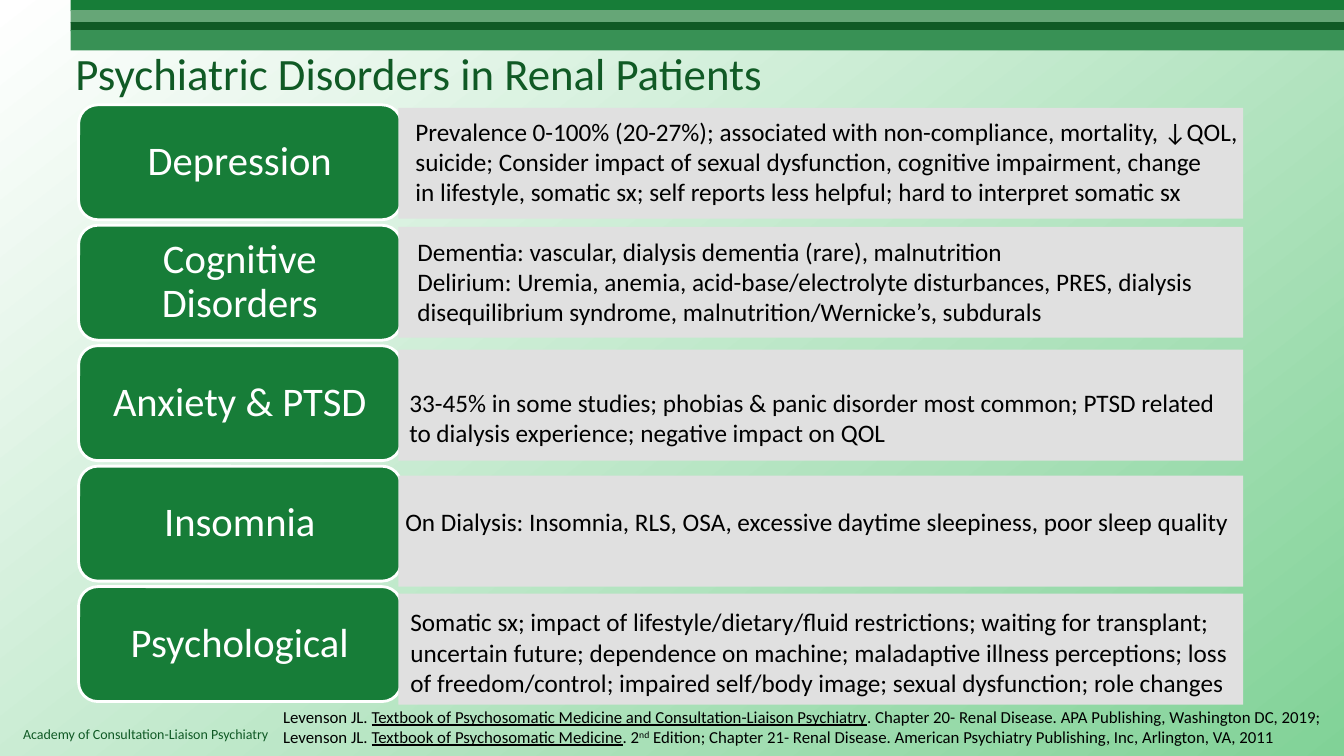
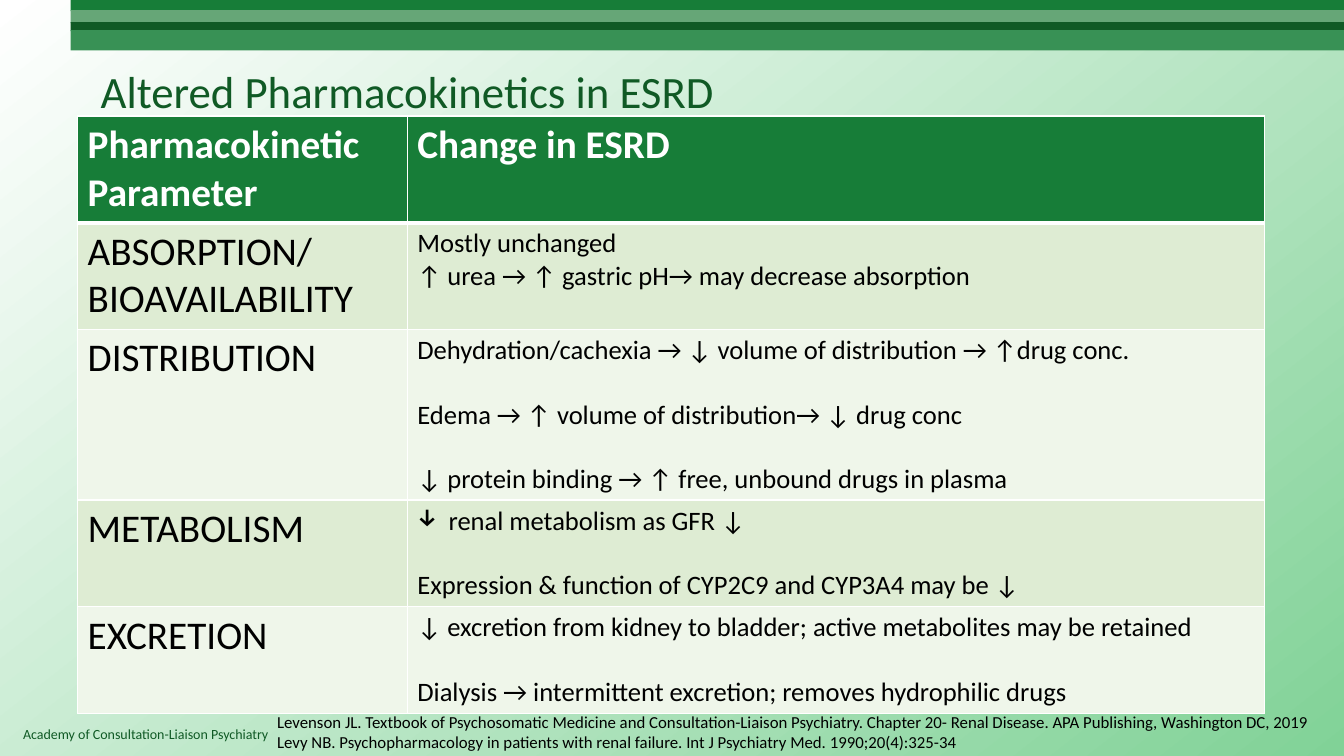
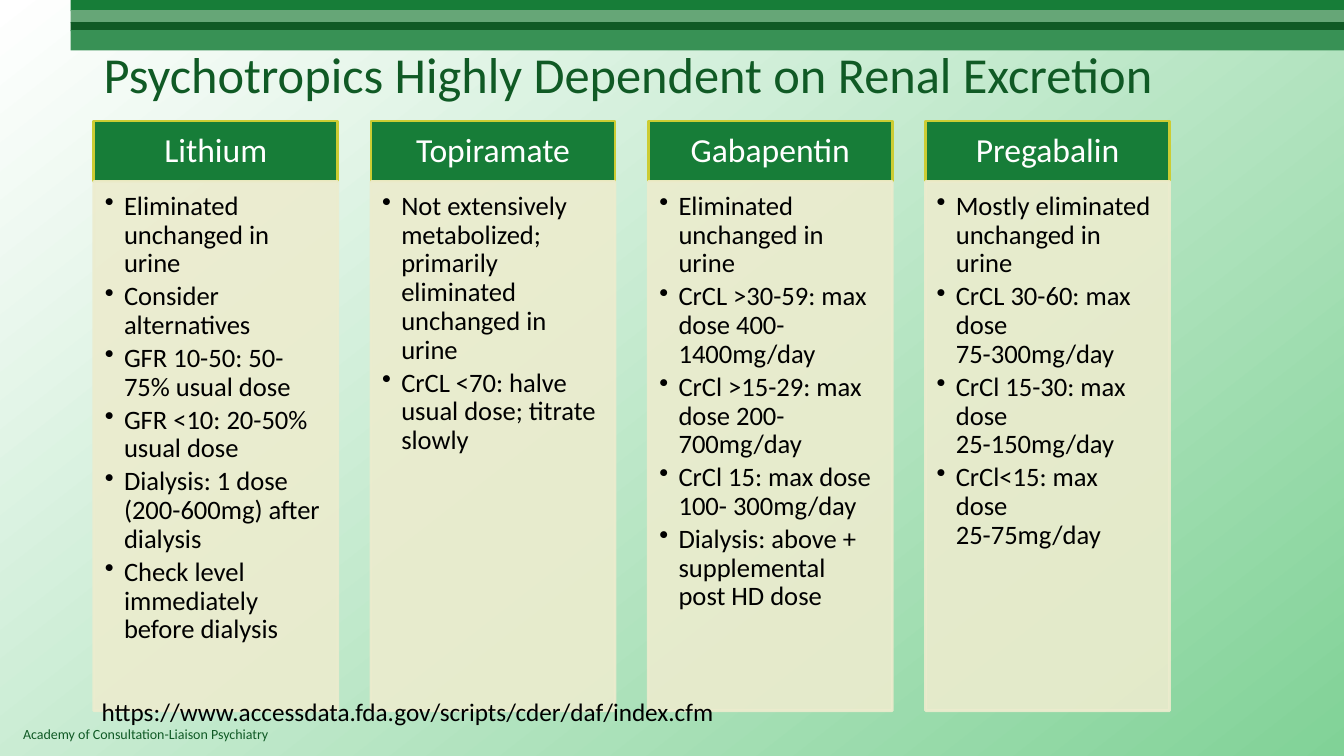
from dataclasses import dataclass
from itertools import zip_longest

from lxml import etree
from pptx import Presentation
from pptx import util as u
from pptx.dml.color import RGBColor
from pptx.enum import shapes, text
from pptx.oxml.ns import qn


@dataclass(frozen=True)
class Theme:
    """Colours and type sizes of the deck."""
    font: str = "Calibri"
    green: str = "177D38"
    dark: str = "105A25"
    sage: str = "66A677"
    leaf: str = "389155"
    mint: str = "81D297"
    white: str = "FFFFFF"
    black: str = "000000"
    grey: str = "E0E0E0"
    olive: str = "CCCC33"
    cream: str = "ECECCE"
    row_odd: str = "DEECD3"
    row_even: str = "EFF6EA"
    title: int = 32
    title_large: int = 36
    label: int = 29
    table_head: int = 28
    column_head: int = 24
    detail: int = 19
    body: int = 18
    source: int = 12
    footer: int = 10


THEME = Theme()
NO_INSETS = (0, 0, 0, 0)
TEXT_INSETS = (0.1, 0.05, 0.1, 0.05)


class Builder:
    def __init__(self):
        self.deck = Presentation()
        self.deck.slide_width = u.Inches(13.33)
        self.deck.slide_height = u.Inches(7.5)
        self.page = None

    # Shared page furniture: background, bands, footer, title
    def new_page(self, title, left, top=0, size=THEME.title):
        self.page = self.deck.slides.add_slide(self.deck.slide_layouts[6])
        fill = self.page.background.fill
        fill.gradient()
        fill.gradient_angle = 308
        for stop, color in zip(fill.gradient_stops, (THEME.white, THEME.mint)):
            stop.color.rgb = RGBColor.from_string(color)
        bands = ((0, 0.11, THEME.green), (0.1, 0.13, THEME.sage),
                 (0.22, 0.09, THEME.dark), (0.3, 0.2, THEME.leaf))
        for band_top, height, color in bands:
            self.shape((0.7, band_top, 12.63, height), color)
        self.label((0.13, 7.15, 9.25, 0.27),
                   ["Academy of Consultation-Liaison Psychiatry"],
                   THEME.footer, THEME.dark)
        self.label((left, top, 11.5, 1.45), [title], size, THEME.dark,
                   anchor=text.MSO_ANCHOR.MIDDLE)

    # Text
    def frame(self, box, insets, anchor):
        frame = box.text_frame
        frame.word_wrap = True
        frame.vertical_anchor = anchor
        (frame.margin_left, frame.margin_top,
         frame.margin_right, frame.margin_bottom) = map(u.Inches, insets)
        return frame

    def set_lines(self, frame, lines, size, color=THEME.black, bold=False,
                  align=text.PP_ALIGN.LEFT, spacing=1.0, before=0, after=0,
                  bullets=(), indent=0):
        """Set one paragraph per line; a line is a string or a list of spans."""
        for index, (line, bullet) in enumerate(zip_longest(lines, bullets)):
            para = frame.paragraphs[0] if index == 0 else frame.add_paragraph()
            para.alignment = align
            para.line_spacing = spacing
            para.space_before = u.Pt(before if index else 0)
            para.space_after = u.Pt(after)
            if bullet:
                props = para._p.get_or_add_pPr()
                props.set("marL", str(u.Inches(indent)))
                props.set("indent", str(u.Inches(-indent)))
                etree.SubElement(props, qn("a:buChar")).set("char", bullet)
            para.font.name = THEME.font
            para.font.size = u.Pt(size)
            para.font.bold = bold
            para.font.color.rgb = RGBColor.from_string(color)
            if isinstance(line, str):
                para.text = line
            else:
                self.add_spans(para, line)

    def add_spans(self, para, parts):
        for words, style in parts:
            span = para.add_run()
            span.text = words
            if style == "underline":
                span.font.underline = True
            elif style == "superscript":
                span._r.get_or_add_rPr().set("baseline", "30000")

    def label(self, area, lines, size, color=THEME.black,
              anchor=text.MSO_ANCHOR.TOP):
        box = self.page.shapes.add_textbox(*map(u.Inches, area))
        self.set_lines(self.frame(box, TEXT_INSETS, anchor), lines, size, color)

    # Filled shapes
    def shape(self, area, fill, line=None, alpha=None, rounded=False,
              insets=NO_INSETS, anchor=text.MSO_ANCHOR.TOP):
        kind = (shapes.MSO_SHAPE.ROUNDED_RECTANGLE if rounded
                else shapes.MSO_SHAPE.RECTANGLE)
        box = self.page.shapes.add_shape(kind, *map(u.Inches, area))
        box.shadow.inherit = False
        box.fill.solid()
        box.fill.fore_color.rgb = RGBColor.from_string(fill)
        if line:
            box.line.color.rgb = RGBColor.from_string(line)
            box.line.width = u.Pt(2)
        else:
            box.line.fill.background()
        if alpha:
            for color in box._element.spPr.iter(qn("a:srgbClr")):
                etree.SubElement(color, qn("a:alpha")).set("val", str(alpha * 1000))
        return self.frame(box, insets, anchor)

    def heading(self, area, words, size, line, insets, rounded=False):
        frame = self.shape(area, THEME.green, line, rounded=rounded,
                           insets=insets, anchor=text.MSO_ANCHOR.MIDDLE)
        self.set_lines(frame, [words], size, THEME.white,
                       align=text.PP_ALIGN.CENTER, spacing=0.9)

    # Table
    def table(self, area, widths, heights):
        grid = self.page.shapes.add_table(len(heights), len(widths),
                                          *map(u.Inches, area)).table
        grid.horz_banding = False
        for column, width in zip(grid.columns, widths):
            column.width = u.Inches(width)
        for row, height in zip(grid.rows, heights):
            row.height = u.Inches(height)
        return grid

    def cell(self, cell, fill, lines, size, bottom=1, **style):
        cell.fill.solid()
        cell.fill.fore_color.rgb = RGBColor.from_string(fill)
        sides = (("a:lnL", 1), ("a:lnR", 1), ("a:lnT", 1), ("a:lnB", bottom))
        props = cell._tc.get_or_add_tcPr()
        for index, (side, width) in enumerate(sides):
            edge = etree.Element(qn(side), w=str(u.Pt(width)))
            paint = etree.SubElement(edge, qn("a:solidFill"))
            etree.SubElement(paint, qn("a:srgbClr")).set("val", THEME.white)
            props.insert(index, edge)
        self.set_lines(cell.text_frame, lines, size, **style)


def disorders_page(builder):
    builder.new_page("Psychiatric Disorders in Renal Patients", 0.65)
    # Label, panel top, text inset from the panel's left and top, lines
    rows = (
        ("Depression", 1.07, 0.17, 0.08, [
            "Prevalence 0-100% (20-27%); associated with non-compliance, mortality, ↓QOL,",
            "suicide; Consider impact of sexual dysfunction, cognitive impairment, change",
            "in lifestyle, somatic sx; self reports less helpful; hard to interpret somatic sx"]),
        ("Cognitive Disorders", 2.25, 0.19, 0.09, [
            "Dementia: vascular, dialysis dementia (rare), malnutrition",
            "Delirium: Uremia, anemia, acid-base/electrolyte disturbances, PRES, dialysis",
            "disequilibrium syndrome, malnutrition/Wernicke’s, subdurals"]),
        ("Anxiety & PTSD", 3.47, 0.11, 0.37, [
            "33-45% in some studies; phobias & panic disorder most common; PTSD related",
            "to dialysis experience; negative impact on QOL"]),
        ("Insomnia", 4.72, 0.07, 0.3, [
            "On Dialysis: Insomnia, RLS, OSA, excessive daytime sleepiness, poor sleep quality"]),
        ("Psychological", 5.89, 0.12, 0.13, [
            "Somatic sx; impact of lifestyle/dietary/fluid restrictions; waiting for transplant;",
            "uncertain future; dependence on machine; maladaptive illness perceptions; loss",
            "of freedom/control; impaired self/body image; sexual dysfunction; role changes"]),
    )
    for index, (name, top, inset_left, inset_top, lines) in enumerate(rows):
        builder.heading((0.78, 1.04 + 1.195 * index, 3.2, 1.14), name, THEME.label,
                        THEME.white, (0.12, 0.06, 0.12, 0.06), rounded=True)
        panel = builder.shape((3.95, top, 8.38, 1.1), THEME.grey,
                              insets=(inset_left, inset_top, 0, 0))
        builder.set_lines(panel, lines, THEME.body)
    builder.label((2.71, 6.96, 10.49, 0.5), [[
        ("Levenson JL. ", None),
        ("Textbook of Psychosomatic Medicine and Consultation-Liaison Psychiatry", "underline"),
        (". Chapter 20- Renal Disease. APA Publishing, Washington DC, 2019; Levenson JL. ", None),
        ("Textbook of Psychosomatic Medicine", "underline"),
        (". 2", None),
        ("nd", "superscript"),
        (" Edition; Chapter 21- Renal Disease. American Psychiatry Publishing, Inc, "
         "Arlington, VA, 2011", None),
    ]], THEME.source)


def pharmacokinetics_page(builder):
    builder.new_page("Altered Pharmacokinetics in ESRD", 0.9, 0.17)
    grid = builder.table((0.77, 1.15, 11.77, 5.93), (3.27, 8.5),
                         (1.06, 1.06, 1.69, 1.06, 1.06))
    for column, words in enumerate(("Pharmacokinetic Parameter", "Change in ESRD")):
        builder.cell(grid.cell(0, column), THEME.green, [words], THEME.table_head,
                     bottom=3, color=THEME.white, bold=True)
    # Parameter, changes, space between changes, bullets
    rows = (
        (["ABSORPTION/", "BIOAVAILABILITY"], [
            "Mostly unchanged",
            "↑ urea → ↑ gastric pH→ may decrease absorption"], 0, ()),
        (["DISTRIBUTION"], [
            "Dehydration/cachexia → ↓ volume of distribution → ↑drug conc.",
            "Edema → ↑ volume of distribution→ ↓ drug conc",
            "↓ protein binding → ↑ free, unbound drugs in plasma"], 23, ()),
        (["METABOLISM"], [
            "renal metabolism as GFR ↓",
            "Expression & function of CYP2C9 and CYP3A4 may be ↓"], 23, ("↓",)),
        (["EXCRETION"], [
            "↓ excretion from kidney to bladder; active metabolites may be retained",
            "Dialysis → intermittent excretion; removes hydrophilic drugs"], 23, ()),
    )
    for index, (parameter, changes, gap, bullets) in enumerate(rows, 1):
        fill = THEME.row_odd if index % 2 else THEME.row_even
        builder.cell(grid.cell(index, 0), fill, parameter, THEME.table_head)
        builder.cell(grid.cell(index, 1), fill, changes, THEME.detail,
                     before=gap, bullets=bullets, indent=0.31)
    builder.label((2.65, 7.01, 10.55, 0.49), [
        "Levenson JL. Textbook of Psychosomatic Medicine and Consultation-Liaison Psychiatry. "
        "Chapter 20- Renal Disease. APA Publishing, Washington DC, 2019",
        "Levy NB. Psychopharmacology in patients with renal failure. "
        "Int J Psychiatry Med. 1990;20(4):325-34"], THEME.source)


def excretion_page(builder):
    builder.new_page("Psychotropics Highly Dependent on Renal Excretion", 0.93,
                     size=THEME.title_large)
    drugs = {
        "Lithium": [
            "Eliminated unchanged in urine", "Consider alternatives",
            "GFR 10-50: 50-75% usual dose", "GFR <10: 20-50% usual dose",
            "Dialysis: 1 dose (200-600mg) after dialysis",
            "Check level immediately before dialysis"],
        "Topiramate": [
            "Not extensively metabolized; primarily eliminated unchanged in urine",
            "CrCL <70: halve usual dose; titrate slowly"],
        "Gabapentin": [
            "Eliminated unchanged in urine", "CrCL >30-59: max dose 400-1400mg/day",
            "CrCl >15-29: max dose 200-700mg/day", "CrCl 15: max dose 100- 300mg/day",
            "Dialysis: above + supplemental post HD dose"],
        "Pregabalin": [
            "Mostly eliminated unchanged in urine", "CrCL 30-60: max dose\n75-300mg/day",
            "CrCl 15-30: max dose\n25-150mg/day", "CrCl<15: max dose\n25-75mg/day"],
    }
    for index, (drug, facts) in enumerate(drugs.items()):
        left = 0.93 + 2.75 * index
        builder.heading((left, 1.2, 2.42, 0.6), drug, THEME.column_head,
                        THEME.olive, (0.19, 0.11, 0.19, 0.11))
        column = builder.shape((left, 1.8, 2.42, 5.25), THEME.cream, THEME.cream,
                               alpha=90, insets=(0.11, 0.11, 0.15, 0.17))
        builder.set_lines(column, facts, THEME.detail, spacing=0.9, after=3,
                          bullets="•" * len(facts), indent=0.19)
    builder.label((0.91, 6.86, 6.34, 0.4),
                  ["https://www.accessdata.fda.gov/scripts/cder/daf/index.cfm"], THEME.body)


def main():
    builder = Builder()
    disorders_page(builder)
    pharmacokinetics_page(builder)
    excretion_page(builder)
    builder.deck.save("out.pptx")


if __name__ == "__main__":
    main()
